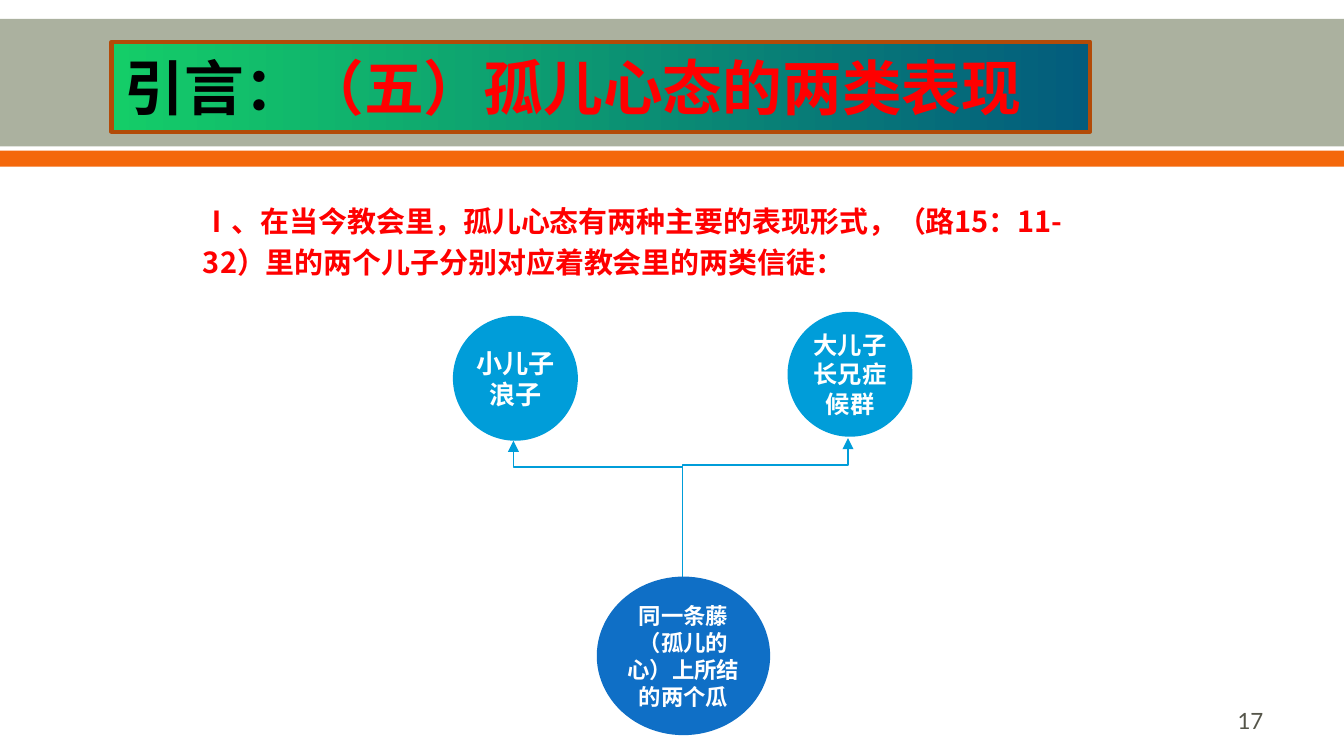
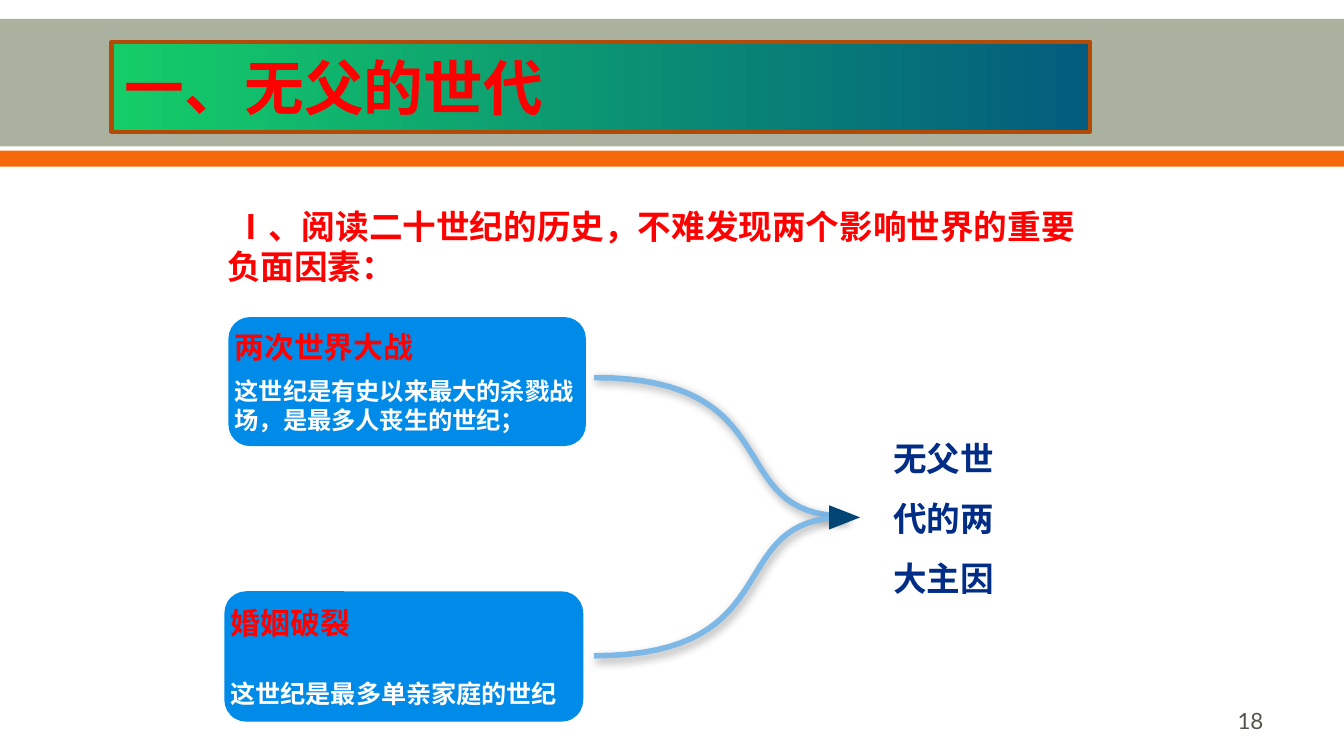
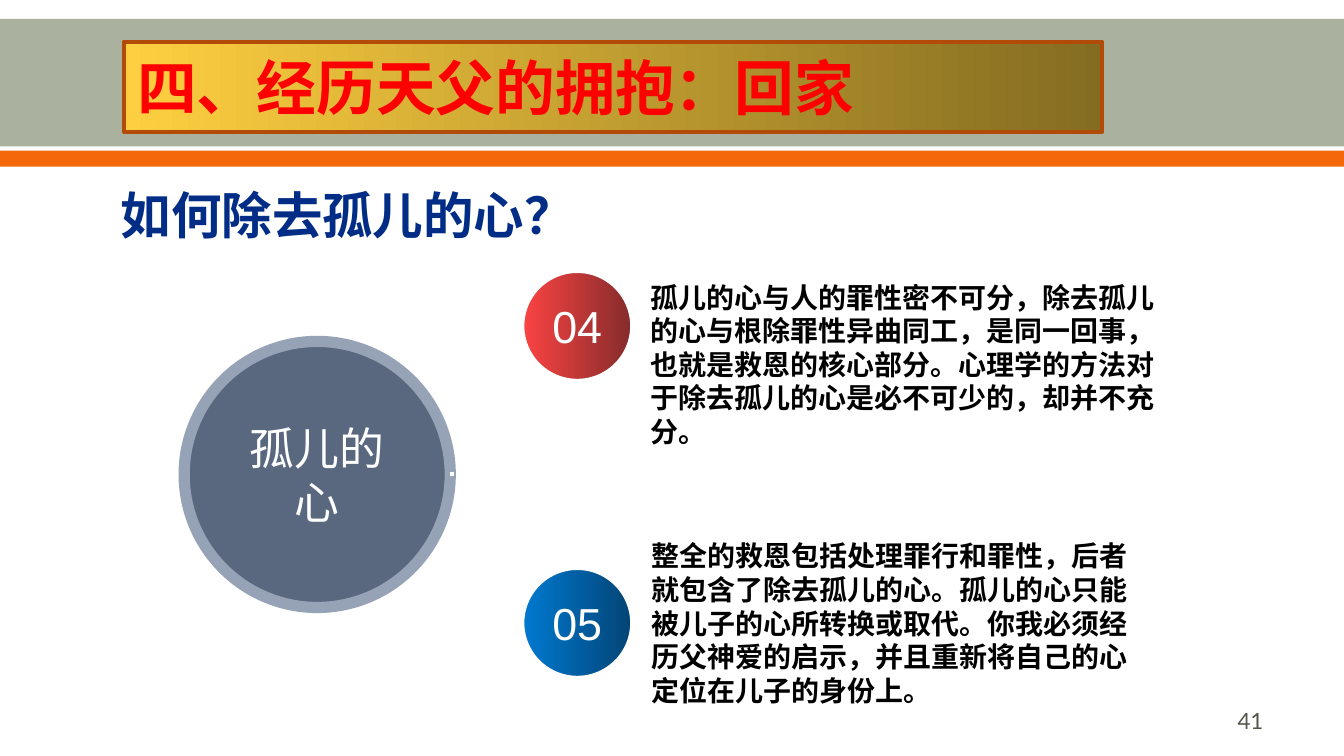
from lxml.etree import SubElement
from pptx import Presentation
from pptx.dml.color import RGBColor
from pptx.enum.dml import MSO_LINE as DASH
from pptx.enum.shapes import MSO_CONNECTOR as CXN, MSO_SHAPE as SHAPE
from pptx.enum.text import MSO_ANCHOR as ANCHOR, MSO_AUTO_SIZE as FIT, PP_ALIGN as ALIGN
from pptx.oxml.ns import qn
from pptx.util import Inches, Pt

COLS, ROWS = 100, 56.25
CELL = Inches(0.1)
CJK, LATO, ARIAL = "Noto Sans CJK SC", "Lato", "Arial"
RED, NAVY, WHITE, BLACK = "FF0000", "012D86", "FFFFFF", "000000"
SKY, CARD, CURVE = "009DD9", "018BE9", "7EB8E7"
GREEN_BLUE, GOLD = ("14CD68", "035C7D"), ("FECF40", "846C21")


def rgb(value):
    """Turn a hex string into a colour."""
    return RGBColor.from_string(value)


def grid(*cells):
    """Turn grid cells into lengths."""
    return [round(c * CELL) for c in cells]


def paint(sp, fill=None, line=None, width=1):
    """Fill a shape with a colour or a pair of gradient colours and outline it."""
    if isinstance(fill, tuple):
        sp.fill.gradient()
        sp.fill.gradient_angle = 0
        for stop, color in zip(sp.fill.gradient_stops, fill):
            stop.color.rgb = rgb(color)
    elif fill:
        sp.fill.solid()
        sp.fill.fore_color.rgb = rgb(fill)
    else:
        sp.fill.background()
    if line:
        sp.line.color.rgb = rgb(line)
        sp.line.width = Pt(width)
    else:
        sp.line.fill.background()


def frame(sp, inset=(1, 0.5), anchor=ANCHOR.MIDDLE):
    """Prepare the text frame of a shape and return it."""
    tf = sp.text_frame
    tf.word_wrap = True
    tf.auto_size = FIT.NONE
    tf.vertical_anchor = anchor
    tf.margin_left, tf.margin_top = tf.margin_right, tf.margin_bottom = grid(*inset)
    return tf


def put(p, text, size, color, font=CJK, bold=True, align=ALIGN.LEFT, spacing=1.0, before=0):
    """Write one formatted paragraph."""
    p.text = text
    p.alignment, p.line_spacing, p.space_before = align, spacing, Pt(before)
    f = p.font
    f.size, f.bold, f.name = Pt(size), bold, font
    f.color.rgb = rgb(color)
    SubElement(f._rPr, qn("a:ea")).set("typeface", CJK)


def shape(s, kind, at, fill, line=None, width=1):
    """Add a preset shape without shadow."""
    sp = s.shapes.add_shape(kind, *grid(*at))
    sp.shadow.inherit = False
    paint(sp, fill, line, width)
    return sp


def label(s, at, text, size, color, inset=(1, 0.5), **style):
    """Add a text box with one paragraph."""
    tf = frame(s.shapes.add_textbox(*grid(*at)), inset)
    put(tf.paragraphs[0], text, size, color, **style)


def disc(s, at, lines, size, fill, line=None, width=1, inset=(0.3, 0.3), **style):
    """Add a circle with centred white text."""
    tf = frame(shape(s, SHAPE.OVAL, at, fill, line, width), inset)
    for i, text in enumerate(lines):
        p = tf.add_paragraph() if i else tf.paragraphs[0]
        put(p, text, size, WHITE, align=ALIGN.CENTER, **style)


def card(s, at, heading, detail, size, gap):
    """Add a rounded card with a red heading and white detail."""
    tf = frame(shape(s, SHAPE.FLOWCHART_ALTERNATE_PROCESS, at, CARD), (0, 0))
    put(tf.paragraphs[0], heading, 16, RED)
    put(tf.add_paragraph(), detail, size, WHITE, before=gap)


def elbow(s, start, end, color, width, upward=False, bend=0.5, dash=None):
    """Add a bent arrow that leaves its start sideways or upward."""
    (x1, y1), (x2, y2) = start, end
    if upward:
        cx, cy, dx, dy = (x1 + x2) / 2, (y1 + y2) / 2, (x2 - x1) / 2, abs(y2 - y1) / 2
        x1, y1, x2, y2 = cx - dy, cy - dx, cx + dy, cy + dx
    c = s.shapes.add_connector(CXN.ELBOW, *grid(x1, y1, x2, y2))
    c.line.color.rgb = rgb(color)
    c.line.width = Pt(width)
    if dash:
        c.line.dash_style = dash
    SubElement(c.line._get_or_add_ln(), qn("a:tailEnd")).set("type", "triangle")
    pr = c._element.spPr
    SubElement(pr, qn("a:effectLst"))
    if upward:
        pr.find(qn("a:xfrm")).set("rot", str(270 * 60000))
    gd = SubElement(pr.find(qn("a:prstGeom")).get_or_add_avLst(), qn("a:gd"))
    gd.set("name", "adj1")
    gd.set("fmla", f"val {round(bend * 100000)}")


def outline(s, points, closed, **look):
    """Add a freeform through grid points."""
    first, *rest = [grid(*pt) for pt in points]
    fb = s.shapes.build_freeform(*first)
    fb.add_line_segments(rest, close=closed)
    sp = fb.convert_to_shape()
    sp.shadow.inherit = False
    paint(sp, **look)
    return sp


def bezier(a, b, c, d, steps=32):
    """List points along a cubic curve."""
    return [tuple((1 - t) ** 3 * i + 3 * t * (1 - t) ** 2 * j + 3 * t * t * (1 - t) * k + t ** 3 * l
                  for i, j, k, l in zip(a, b, c, d))
            for t in (n / steps for n in range(steps + 1))]


def curve(s, *controls):
    """Add a thick curve with a soft shadow."""
    sp = outline(s, bezier(*controls), False, line=CURVE, width=3)
    shadow = SubElement(sp._element.spPr.find(qn("a:effectLst")), qn("a:outerShdw"))
    for key, value in (("blurRad", Pt(5)), ("dist", Pt(2)), ("dir", 60 * 60000)):
        shadow.set(key, str(int(value)))
    color = SubElement(shadow, qn("a:srgbClr"))
    color.set("val", BLACK)
    SubElement(color, qn("a:alpha")).set("val", "35000")


def place(sp, at):
    """Move a placeholder to a grid position."""
    sp.left, sp.top, sp.width, sp.height = grid(*at)


def banner(s, runs, fill, left=8.3, font=LATO):
    """Turn the title placeholder into the rounded gradient banner."""
    sp = s.shapes.title
    place(sp, (left, 3.1, 72.8, 6.7))
    geom = SubElement(sp._element.spPr, qn("a:prstGeom"))
    geom.set("prst", "flowChartAlternateProcess")
    SubElement(geom, qn("a:avLst"))
    paint(sp, fill, "B24B08", 2.25)
    p = frame(sp).paragraphs[0]
    put(p, "", 32, RED, font)
    for text, color in runs:
        r = p.add_run()
        r.text = text
        r.font.color.rgb = rgb(color)


def statement(s, at, text, size, color, inset=(0.7, 0.4), anchor=ANCHOR.TOP, indent=0, spacing=1.0):
    """Write the lead sentence in the body placeholder."""
    sp = s.placeholders[1]
    place(sp, at)
    p = frame(sp, inset, anchor).paragraphs[0]
    pr = p._p.get_or_add_pPr()
    pr.set("marL", str(grid(indent)[0]))
    pr.set("indent", "0")
    SubElement(pr, qn("a:buNone"))
    put(p, text, size, color, spacing=spacing)


def new_slide(prs, number):
    """Add a slide with its page number."""
    s = prs.slides.add_slide(prs.slide_layouts[1])
    label(s, (71.7, 52.1, 23.3, 3), number, 12, "55554A", font=LATO, bold=False, align=ALIGN.RIGHT)
    return s


def master_bands(prs):
    """Put the grey and orange bands on the slide master."""
    tree = prs.slide_master.shapes._spTree
    for top, height, color in ((1.4, 9.5, "ABB19F"), (11.2, 1.2, "F4680B")):
        band = shape(prs.slides[0], SHAPE.RECTANGLE, (0, top, COLS, height), color)
        tree.insert(2, band._element)


def two_sons(prs):
    """Build the slide on the two kinds of orphan mind."""
    s = new_slide(prs, "17")
    banner(s, [("引言：", BLACK), ("（五）孤儿心态的两类表现", RED)], GREEN_BLUE)
    statement(s, (12.5, 14.2, 70.7, 9.6),
              "Ⅰ、在当今教会里，孤儿心态有两种主要的表现形式，（路15：11-32）里的两个儿子分别对应着教会里的两类信徒：",
              15.5, RED, indent=1.9, spacing=1.2)
    for tip in ((38.2, 32.8), (63.1, 32.6)):
        elbow(s, (50.8, 45), tip, SKY, 0.75, upward=True, bend=0.84)
    disc(s, (33.7, 23.5, 9.3, 9.3), ["小儿子", "浪子"], 14, SKY)
    disc(s, (58.6, 23.2, 9.3, 9.3), ["大儿子", "长兄症候群"], 13, SKY)
    disc(s, (44.4, 42.9, 12.9, 11.8), ["同一条藤（孤儿的心）上所结的两个瓜"], 12, "0F6FC6")


def fatherless_age(prs):
    """Build the slide on the two causes of the fatherless generation."""
    s = new_slide(prs, "18")
    banner(s, [("一、无父的世代", RED)], GREEN_BLUE, font=ARIAL)
    statement(s, (15.9, 14.8, 66.5, 6.9),
              " Ⅰ、阅读二十世纪的历史，不难发现两个影响世界的重要负面因素：", 18, RED, inset=(1, 0.5))
    label(s, (64.3, 27.8, 11.8, 20), "无父世代的两大主因", 18, NAVY, align=ALIGN.CENTER, spacing=1.5)
    card(s, (17, 23.6, 26.6, 9.6), "两次世界大战",
         "这世纪是有史以来最大的杀戮战场，是最多人丧生的世纪；", 13, 6)
    card(s, (16.7, 44, 26.7, 9.7), "婚姻破裂", "这世纪是最多单亲家庭的世纪", 13.5, 20)
    for start, end in ((28.1, 38.4), (48.8, 38.5)):
        curve(s, (44.2, start), (59, start), (53.6, end), (62.9, end))
    outline(s, [(61.7, 37.6), (64, 38.5), (61.7, 39.4)], True, fill="004574")


def coming_home(prs):
    """Build the slide on removing the orphan heart."""
    s = new_slide(prs, "41")
    banner(s, [("四、经历天父的拥抱：回家", RED)], GOLD, left=9.2)
    statement(s, (8.3, 12.8, 86.2, 6.9), "如何除去孤儿的心？", 27, NAVY, anchor=ANCHOR.MIDDLE, spacing=0.9)
    plain = dict(inset=(1, 0.5), font=ARIAL, bold=False)
    disc(s, (13.7, 25.4, 19.8, 19.8), ["孤儿的心"], 24, "59687F", "96A3B6", 6, **plain)
    points = (
        ("04", 20, ("FE4444", "832B2B"), (48.4, 20.6, 39.4, 13),
         "孤儿的心与人的罪性密不可分，除去孤儿的心与根除罪性异曲同工，是同一回事，也就是救恩的核心部分。"
         "心理学的方法对于除去孤儿的心是必不可少的，却并不充分。"),
        ("05", 42.1, ("007BD3", "034373"), (48.5, 42.7, 37.1, 7.3),
         "整全的救恩包括处理罪行和罪性，后者就包含了除去孤儿的心。孤儿的心只能被儿子的心所转换或取代。"
         "你我必须经历父神爱的启示，并且重新将自己的心定位在儿子的身份上。"),
    )
    for number, top, fill, box, text in points:
        disc(s, (38.7, top, 8.5, 8.5), [number], 24, fill, WHITE, 4.5, **plain)
        label(s, box, text, 15, BLACK, inset=(0, 0.5))
    for tip in ((38.7, 24.2), (35.8, 35.3), (38.7, 46.3)):
        elbow(s, (33.5, 35.3), tip, WHITE, 2.25, dash=DASH.ROUND_DOT)


def main():
    """Build and save the presentation."""
    prs = Presentation()
    prs.slide_width, prs.slide_height = grid(COLS, ROWS)
    two_sons(prs)
    fatherless_age(prs)
    coming_home(prs)
    master_bands(prs)
    prs.save("out.pptx")


if __name__ == "__main__":
    main()
